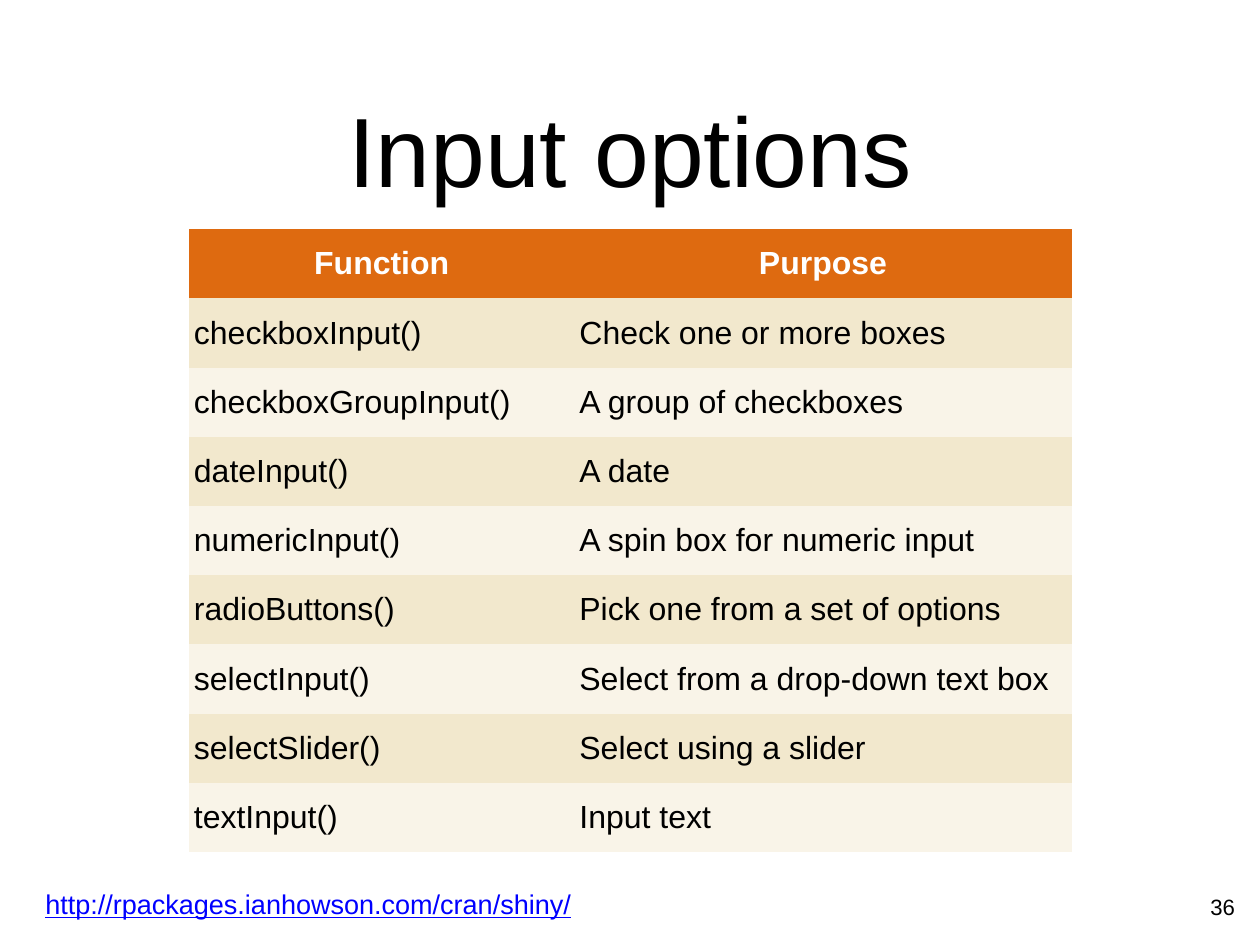
from pptx import Presentation
from pptx import util as u
from pptx.dml import color
from pptx.enum import text
from pptx.oxml import ns

COLOURS = {
    "ink": "000000",
    "header": "DE6A10",
    "header_text": "FFFFFF",
    "odd_row": "F2E8CD",
    "even_row": "F9F4E8",
    "link": "0000FF",
}
FONT = "Arial"
PLAIN_TABLE_STYLE = "{2D5ABB26-0587-4C30-8999-92F81FD0307C}"
INPUT_OPTIONS = [
    ("Function", "Purpose"),
    ("checkboxInput()", "Check one or more boxes"),
    ("checkboxGroupInput()", "A group of checkboxes"),
    ("dateInput()", "A date"),
    ("numericInput()", "A spin box for numeric input"),
    ("radioButtons()", "Pick one from a set of options"),
    ("selectInput()", "Select from a drop-down text box"),
    ("selectSlider()", "Select using a slider"),
    ("textInput()", "Input text"),
]


def rgb(name):
    return color.RGBColor.from_string(COLOURS[name])


class SlideBuilder:
    def __init__(self, page):
        self.page = page

    def format_paragraph(self, para, size, colour="ink", centred=False, bold=False):
        para.alignment = text.PP_ALIGN.CENTER if centred else text.PP_ALIGN.LEFT
        para.font.name = FONT
        para.font.size = u.Pt(size)
        para.font.bold = bold
        para.font.color.rgb = rgb(colour)

    def set_margins(self, owner, margin):
        owner.margin_left = owner.margin_right = u.Cm(margin)
        owner.margin_top = owner.margin_bottom = u.Cm(margin)

    def fill_frame(self, box, words, margin=0.0, wrap=False, anchor=text.MSO_ANCHOR.MIDDLE):
        frame = box.text_frame
        frame.text = words
        frame.word_wrap = wrap
        frame.auto_size = text.MSO_AUTO_SIZE.NONE
        frame.vertical_anchor = anchor
        self.set_margins(frame, margin)
        return frame.paragraphs[0]

    def title(self, words, left, top, width, height):
        box = self.page.shapes.title
        box.left, box.top = u.Cm(left), u.Cm(top)
        box.width, box.height = u.Cm(width), u.Cm(height)
        para = self.fill_frame(box, words, wrap=True)
        self.format_paragraph(para, 80, centred=True)

    def label(self, words, left, top, width, height, size, margin=0.0,
              anchor=text.MSO_ANCHOR.MIDDLE, **style):
        box = self.page.shapes.add_textbox(
            u.Cm(left), u.Cm(top), u.Cm(width), u.Cm(height))
        para = self.fill_frame(box, words, margin, anchor=anchor)
        self.format_paragraph(para, size, **style)
        return para

    def table(self, rows, left, top, column_widths, row_height):
        frame = self.page.shapes.add_table(
            len(rows), len(column_widths), u.Cm(left), u.Cm(top),
            u.Cm(sum(column_widths)), u.Cm(row_height * len(rows)))
        table = frame.table
        table.horz_banding = False
        style_id = frame._element.find(".//" + ns.qn("a:tableStyleId"))
        style_id.text = PLAIN_TABLE_STYLE
        for column, width in zip(table.columns, column_widths):
            column.width = u.Cm(width)
        for index, (row, words) in enumerate(zip(table.rows, rows)):
            row.height = u.Cm(row_height)
            header = index == 0
            fill = "header" if header else "odd_row" if index % 2 else "even_row"
            for cell, content in zip(row.cells, words):
                cell.text = content
                cell.fill.solid()
                cell.fill.fore_color.rgb = rgb(fill)
                cell.vertical_anchor = text.MSO_ANCHOR.MIDDLE
                self.set_margins(cell, 0.14)
                self.format_paragraph(
                    cell.text_frame.paragraphs[0], 26,
                    colour="header_text" if header else "ink",
                    centred=header, bold=header)


def main():
    deck = Presentation()
    deck.slide_width, deck.slide_height = u.Cm(36.12), u.Cm(27.1)
    builder = SlideBuilder(deck.slides.add_slide(deck.slide_layouts[5]))
    builder.title("Input options", 2.65, 1.25, 30.84, 5.99)
    builder.label("36", 34.54, 25.63, 1.02, 1.07, 18,
                  anchor=text.MSO_ANCHOR.TOP, centred=True)
    builder.table(INPUT_OPTIONS, 5.42, 6.57, (11.05, 14.25), 1.985)
    link = builder.label("http://rpackages.ianhowson.com/cran/shiny/",
                         1.16, 25.22, 15.87, 1.22, 22, margin=0.14, colour="link")
    link.font.underline = True
    link.line_spacing = 1.18
    deck.save("out.pptx")


if __name__ == "__main__":
    main()
